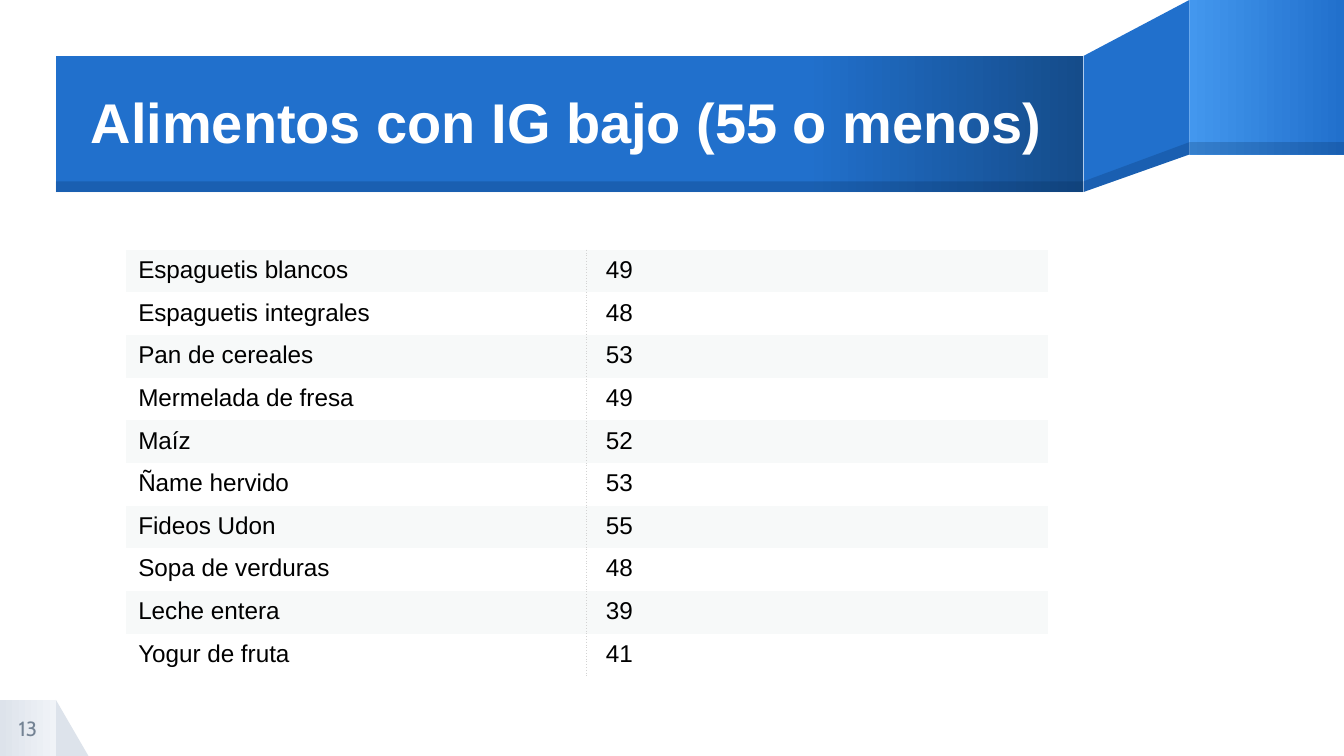
from dataclasses import dataclass
from typing import Optional

from lxml.etree import SubElement
from pptx import Presentation
from pptx.dml.color import RGBColor
from pptx.enum.shapes import MSO_SHAPE
from pptx.enum.text import MSO_ANCHOR, PP_ALIGN
from pptx.oxml import parse_xml
from pptx.oxml.ns import nsdecls, qn
from pptx.util import Inches, Pt

COLORS = {
    "white": "FFFFFF", "black": "000000", "blue": "2170CC", "sky": "4397EE",
    "navy": "154C8A", "shade": "001F46", "mist": "DDE3EB", "haze": "F0F3F7",
    "slate": "748394", "band": "F7F9F9", "rule": "D3D3D3",
}
SLIDE_WIDTH, SLIDE_HEIGHT = Inches(10), Inches(5.625)
COLUMNS = 24
CELL = SLIDE_WIDTH / COLUMNS
ROWS = SLIDE_HEIGHT / CELL

FRONT_LEFT, FOLD_LEFT, FOLD_RIGHT = 1, 19.35, 21.24
FRONT_TOP, FRONT_BOTTOM, FRONT_EDGE = 1, 3.43, 3.24
BACK_TOP, BACK_BOTTOM, BACK_EDGE = 0, 2.76, 2.54
SHADE_OPACITY = 20

FOODS = [
    ("Espaguetis blancos", 49), ("Espaguetis integrales", 48),
    ("Pan de cereales", 53), ("Mermelada de fresa", 49), ("Maíz", 52),
    ("Ñame hervido", 53), ("Fideos Udon", 55), ("Sopa de verduras", 48),
    ("Leche entera", 39), ("Yogur de fruta", 41),
]


@dataclass(frozen=True)
class Area:
    column: float
    row: float
    columns: float
    rows: float

    def lengths(self):
        return [grid(value) for value in (self.column, self.row, self.columns, self.rows)]


@dataclass(frozen=True)
class Paint:
    stops: tuple
    opacity: Optional[int] = None


@dataclass(frozen=True)
class Panel:
    area: Area
    paint: Paint
    preset: MSO_SHAPE = MSO_SHAPE.RECTANGLE


@dataclass(frozen=True)
class Fold:
    points: tuple
    paint: Paint


@dataclass(frozen=True)
class Label:
    area: Area
    text: str
    font: dict
    color: str
    paragraph: dict


SOLID_BLUE = Paint(((0, "blue"),))
SHADE = Paint(((0, "shade"),), SHADE_OPACITY)
FRONT_WIDTH = FOLD_LEFT - FRONT_LEFT
BACK_WIDTH = COLUMNS - FOLD_RIGHT

DECORATION = [
    Panel(Area(1, ROWS - 1, 0.58, 1), Paint(((0, "mist"),)), MSO_SHAPE.RIGHT_TRIANGLE),
    Panel(Area(0, ROWS - 1, 1, 1), Paint(((0, "mist"), (100, "haze")))),
    Fold(((FOLD_RIGHT, BACK_TOP), (FOLD_LEFT, FRONT_TOP),
          (FOLD_LEFT, FRONT_BOTTOM), (FOLD_RIGHT, BACK_BOTTOM)), SOLID_BLUE),
    Panel(Area(FOLD_RIGHT, BACK_TOP, BACK_WIDTH, BACK_BOTTOM),
          Paint(((0, "sky"), (100, "blue")))),
    Panel(Area(FRONT_LEFT, FRONT_TOP, FRONT_WIDTH, FRONT_BOTTOM - FRONT_TOP),
          Paint(((0, "blue"), (73, "blue"), (100, "navy")))),
    Fold(((FOLD_RIGHT, BACK_EDGE), (FOLD_LEFT, FRONT_EDGE),
          (FOLD_LEFT, FRONT_BOTTOM), (FOLD_RIGHT, BACK_BOTTOM)), SHADE),
    Panel(Area(FOLD_RIGHT, BACK_EDGE, BACK_WIDTH, BACK_BOTTOM - BACK_EDGE), SHADE),
    Panel(Area(FRONT_LEFT, FRONT_EDGE, FRONT_WIDTH, FRONT_BOTTOM - FRONT_EDGE), SHADE),
]
LABELS = [
    Label(Area(1.62, 1.03, 17.73, 2.42), "Alimentos con IG bajo (55 o menos)",
          {"name": "Arial", "size": Pt(30), "bold": True}, "white",
          {"alignment": PP_ALIGN.LEFT, "line_spacing": 0.9}),
    Label(Area(0, ROWS - 1, 1, 1), "13", {"name": "Cabin", "size": Pt(11)}, "slate",
          {"alignment": PP_ALIGN.CENTER}),
]
TABLE_AREA = Area(2.25, 4.46, 16.46, 7.41)
TABLE_FONT = {"name": "Arial", "size": Pt(13)}
NO_STYLE = "{2D5ABB26-0587-4C30-8999-92F81FD0307C}"


def grid(cells: float) -> int:
    return round(cells * CELL)


def set_all(target, values: dict) -> None:
    for name, value in values.items():
        setattr(target, name, value)


def color_of(name: str) -> RGBColor:
    return RGBColor.from_string(COLORS[name])


def paint_shape(shape, paint: Paint) -> None:
    shape.shadow.inherit = False
    shape.line.fill.background()
    if len(paint.stops) == 1:
        shape.fill.solid()
        shape.fill.fore_color.rgb = color_of(paint.stops[0][1])
    else:
        shape.fill.gradient()
        shape.fill.gradient_angle = 0
        stop_list = shape.element.spPr.find(".//" + qn("a:gsLst"))
        stop_list.clear()
        for position, name in paint.stops:
            stop = SubElement(stop_list, qn("a:gs"), pos=str(position * 1000))
            SubElement(stop, qn("a:srgbClr"), val=COLORS[name])
    if paint.opacity is not None:
        color = shape.element.spPr.find(".//" + qn("a:srgbClr"))
        SubElement(color, qn("a:alpha"), val=str(paint.opacity * 1000))


def draw_panel(page, panel: Panel) -> None:
    paint_shape(page.shapes.add_shape(panel.preset, *panel.area.lengths()), panel.paint)


def draw_fold(page, fold: Fold) -> None:
    start, *others = [(grid(column), grid(row)) for column, row in fold.points]
    builder = page.shapes.build_freeform(*start)
    builder.add_line_segments(others, close=True)
    paint_shape(builder.convert_to_shape(), fold.paint)


def write_text(paragraph, text: str, font: dict, color: str) -> None:
    span = paragraph.add_run()
    span.text = text
    set_all(span.font, font)
    span.font.color.rgb = color_of(color)


def draw_label(page, label: Label) -> None:
    frame = page.shapes.add_textbox(*label.area.lengths()).text_frame
    set_all(frame, {"word_wrap": True, "vertical_anchor": MSO_ANCHOR.MIDDLE,
                    "margin_left": 0, "margin_top": 0,
                    "margin_right": 0, "margin_bottom": 0})
    para = frame.paragraphs[0]
    set_all(para, label.paragraph)
    write_text(para, label.text, label.font, label.color)


def add_dotted_border(cell, side: str) -> None:
    border = parse_xml(
        f'<a:{side} {nsdecls("a")} w="{Pt(0.5)}"><a:solidFill>'
        f'<a:srgbClr val="{COLORS["rule"]}"/></a:solidFill>'
        f'<a:prstDash val="dot"/></a:{side}>')
    cell._tc.get_or_add_tcPr().insert(0, border)


def draw_table(page, area: Area, foods: list) -> None:
    table = page.shapes.add_table(len(foods), 2, *area.lengths()).table
    set_all(table, {"first_row": False, "horz_banding": False})
    table._tbl.tblPr.find(qn("a:tableStyleId")).text = NO_STYLE
    for row, food in enumerate(foods):
        for column, (value, inset, side) in enumerate(zip(food, (0.22, 0.34), ("lnR", "lnL"))):
            cell = table.cell(row, column)
            set_all(cell, {"margin_left": grid(inset), "margin_right": grid(0.22),
                           "margin_top": grid(0.12), "margin_bottom": grid(0.12)})
            cell.fill.solid()
            cell.fill.fore_color.rgb = color_of("white" if row % 2 else "band")
            add_dotted_border(cell, side)
            write_text(cell.text_frame.paragraphs[0], str(value), TABLE_FONT, "black")


def main() -> None:
    deck = Presentation()
    set_all(deck, {"slide_width": SLIDE_WIDTH, "slide_height": SLIDE_HEIGHT})
    page = deck.slides.add_slide(deck.slide_layouts[6])
    for piece in DECORATION:
        draw = draw_panel if isinstance(piece, Panel) else draw_fold
        draw(page, piece)
    for label in LABELS:
        draw_label(page, label)
    draw_table(page, TABLE_AREA, FOODS)
    deck.save("out.pptx")


if __name__ == "__main__":
    main()
